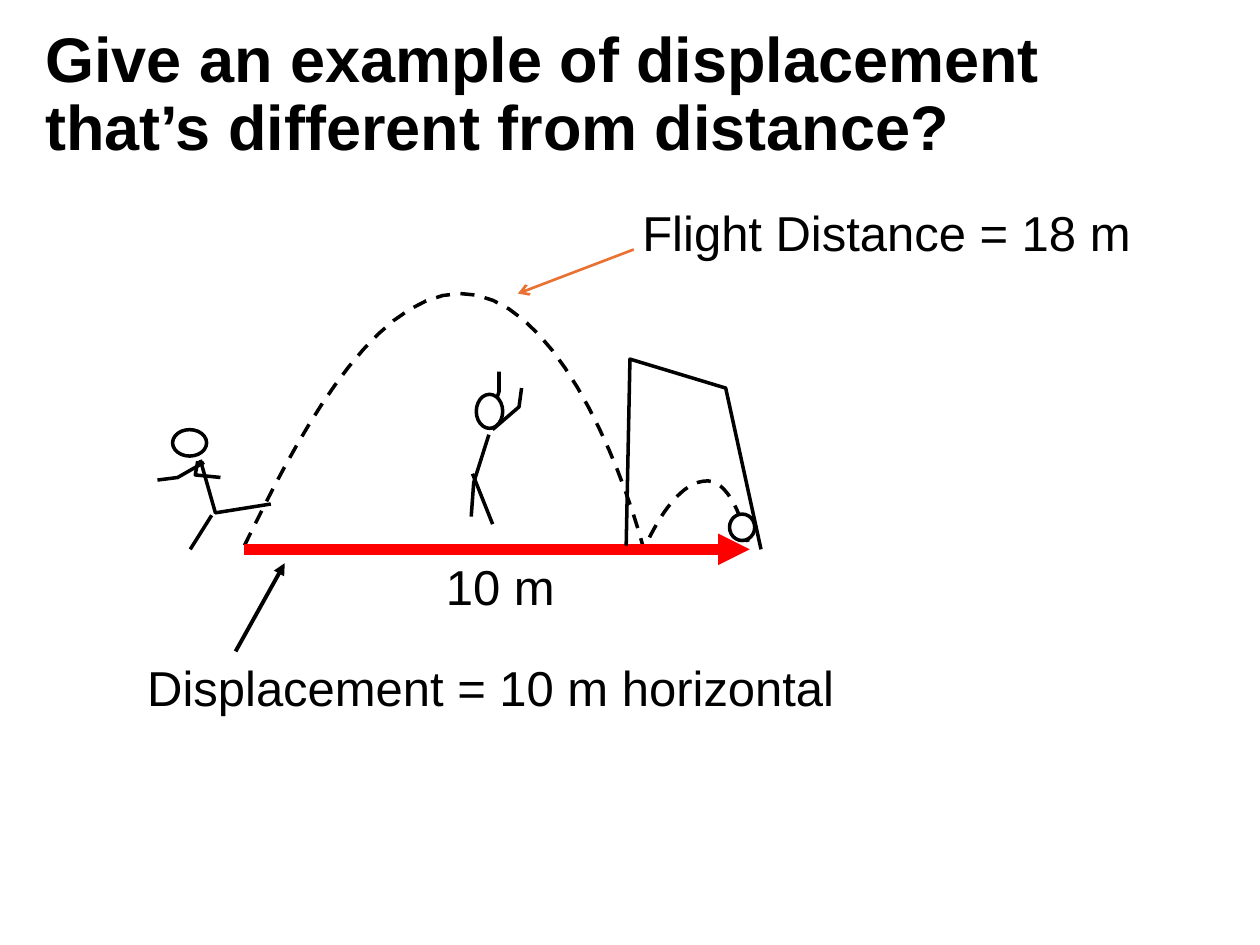
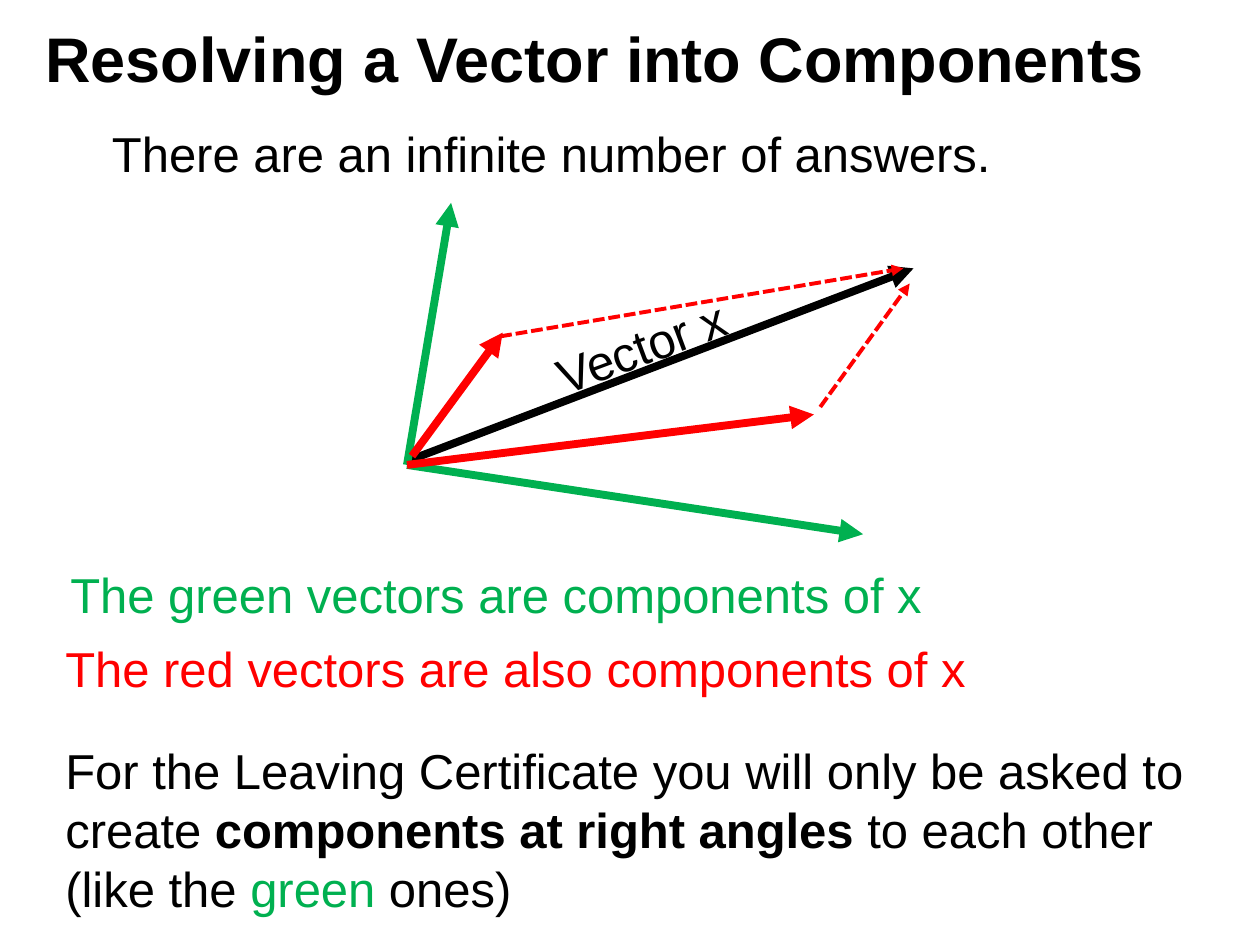
from dataclasses import dataclass

from lxml import etree
from pptx import Presentation
from pptx.dml.color import RGBColor
from pptx.enum.dml import MSO_LINE
from pptx.enum.shapes import MSO_CONNECTOR, MSO_SHAPE
from pptx.enum.text import MSO_ANCHOR, MSO_AUTO_SIZE, PP_ALIGN
from pptx.oxml.ns import qn
from pptx.util import Inches, Pt

STRAIGHT = MSO_CONNECTOR.STRAIGHT
OVAL = MSO_SHAPE.OVAL
DASH = MSO_LINE.DASH
SHORT_DASH = MSO_LINE.SQUARE_DOT
TOP = MSO_ANCHOR.TOP
LEFT = PP_ALIGN.LEFT
GROW = MSO_AUTO_SIZE.SHAPE_TO_FIT_TEXT
TITLE_ONLY = 5


@dataclass(frozen=True)
class Theme:
    font: str = "Arial"
    black: str = "000000"
    white: str = "FFFFFF"
    red: str = "FF0000"
    green: str = "00B050"
    orange: str = "E97132"
    title_size: float = 36
    body_size: float = 28
    pen: float = 2
    pointer: float = 2.25
    vector: float = 4.5
    displacement: float = 6


THEME = Theme()


def write(frame, *runs, size=THEME.body_size, color=THEME.black, bold=False,
          wrap=True, spacing=None):
    frame.word_wrap = wrap
    frame.auto_size = GROW
    frame.vertical_anchor = TOP
    paragraph = frame.paragraphs[0]
    paragraph.alignment = LEFT
    if spacing:
        paragraph.line_spacing = spacing
    for words, changes in runs:
        run = paragraph.add_run()
        run.text = words
        run.font.name = THEME.font
        run.font.size = Pt(size)
        run.font.bold = changes.get("bold", bold)
        run.font.color.rgb = RGBColor.from_string(changes.get("color", color))


def bezier(start, *curves, steps=16):
    points = [start]
    for first, second, end in curves:
        origin = points[-1]
        for step in range(1, steps + 1):
            t = step / steps
            weights = ((1 - t) ** 3, 3 * t * (1 - t) ** 2, 3 * t * t * (1 - t), t ** 3)
            corners = (origin, first, second, end)
            points.append(tuple(sum(w * corner[axis] for w, corner in zip(weights, corners))
                                for axis in (0, 1)))
    return points


class Board:
    def __init__(self, deck, theme):
        self.deck = deck
        self.theme = theme
        self.slide = None

    def start(self, heading, height):
        self.slide = self.deck.slides.add_slide(self.deck.slide_layouts[TITLE_ONLY])
        title = self.slide.shapes.title
        title.left, title.top = Inches(0.26), Inches(0.17)
        title.width, title.height = Inches(9.54), Inches(height)
        write(title.text_frame, (heading, {}), size=self.theme.title_size,
              bold=True, spacing=0.9)

    def text(self, box, *runs, rotation=0, **style):
        label = self.slide.shapes.add_textbox(*map(Inches, box))
        label.rotation = rotation
        write(label.text_frame, *runs, **style)

    def stroke(self, line, color, width, dash=None):
        line.color.rgb = RGBColor.from_string(color)
        line.width = Pt(width)
        if dash:
            line.dash_style = dash

    def line(self, start, end, color=THEME.black, width=THEME.pen, dash=None, tip=None):
        connector = self.slide.shapes.add_connector(STRAIGHT, *map(Inches, (*start, *end)))
        self.stroke(connector.line, color, width, dash)
        properties = connector._element.spPr
        if tip:
            etree.SubElement(properties.find(qn("a:ln")), qn("a:tailEnd"), type=tip)
        etree.SubElement(properties, qn("a:effectLst"))

    def outline(self, points, dash=None):
        corners = [(Inches(x), Inches(y)) for x, y in points]
        builder = self.slide.shapes.build_freeform(*corners[0])
        builder.add_line_segments(corners[1:], close=False)
        shape = builder.convert_to_shape()
        shape.shadow.inherit = False
        shape.fill.background()
        self.stroke(shape.line, self.theme.black, self.theme.pen, dash)

    def oval(self, box, fill=None):
        shape = self.slide.shapes.add_shape(OVAL, *map(Inches, box))
        shape.shadow.inherit = False
        if fill:
            shape.fill.solid()
            shape.fill.fore_color.rgb = RGBColor.from_string(fill)
        else:
            shape.fill.background()
        self.stroke(shape.line, self.theme.black, self.theme.pen)


def draw_kicker(board):
    board.oval((1.37, 3.41, 0.27, 0.21))
    body_and_leg = [(1.59, 3.65), (1.71, 4.07), (2.15, 4)]
    front_arm = [(1.57, 3.66), (1.55, 3.77), (1.75, 3.79)]
    back_arm = [(1.62, 3.67), (1.41, 3.79), (1.25, 3.81)]
    for limb in (body_and_leg, front_arm, back_arm):
        board.outline(limb)
    board.line((1.68, 4.09), (1.51, 4.36))


def draw_goalkeeper(board):
    body_and_leg = [(3.88, 3.45), (3.76, 3.83), (3.74, 4.1)]
    right_arm = [(3.91, 3.41), (4.12, 3.23), (4.14, 3.08)]
    left_arm = [(3.87, 3.38), (3.96, 3.11), (3.96, 2.95)]
    for limb in (body_and_leg, right_arm, left_arm):
        board.outline(limb)
    board.line((3.75, 3.76), (3.91, 4.16))
    board.oval((3.78, 3.13, 0.21, 0.27), board.theme.white)


def displacement_slide(board):
    theme = board.theme
    board.start("Give an example of displacement that’s different from distance?", 1.2)
    board.text((1.07, 5.17, 5.75, 0.57), ("Displacement = 10 m horizontal", {}))
    board.text((5, 1.56, 4.11, 0.57), ("Flight Distance = 18 m", {}))
    board.line((5.03, 1.98), (4.11, 2.33), theme.orange, 1.5, tip="arrow")
    flight = bezier(
        (1.94, 4.33),
        ((2.3, 3.6), (2.92, 2.34), (3.65, 2.33)),
        ((4.38, 2.32), (4.92, 3.65), (5.11, 4.36)),
        ((5.2, 4.16), (5.37, 3.85), (5.58, 3.82)),
        ((5.79, 3.78), (5.9, 4.16), (5.95, 4.35)),
    )
    board.outline(flight, DASH)
    draw_kicker(board)
    board.line((1.94, 4.36), (5.95, 4.36), theme.red, theme.displacement, tip="triangle")
    draw_goalkeeper(board)
    board.oval((5.79, 4.08, 0.2, 0.21), theme.white)
    goal = [(4.97, 4.33), (5, 2.85), (5.76, 3.08), (6.04, 4.36)]
    board.outline(goal)
    board.text((3.44, 4.37, 1.24, 0.57), ("10 m", {}))
    board.line((1.87, 5.17), (2.26, 4.47), width=theme.pointer, tip="triangle")


def components_slide(board):
    theme = board.theme
    board.start("Resolving a Vector into Components", 0.65)
    board.text((0.79, 0.93, 8.9, 0.57), ("There are an infinite number of answers.", {}))
    origin = (3.23, 3.69)
    solid = {"width": theme.vector, "tip": "triangle"}
    dashed = {"width": theme.pointer, "dash": SHORT_DASH, "tip": "triangle"}
    board.line((3.23, 3.66), (7.25, 2.13), **solid)
    board.text((4.29, 2.46, 1.62, 0.57), ("Vector x", {}), rotation=339.6, wrap=False)
    for start, end, color, style in (
        (origin, (6.85, 4.24), theme.green, solid),
        (origin, (3.58, 1.61), theme.green, solid),
        (origin, (6.46, 3.29), theme.red, solid),
        ((6.51, 3.23), (7.22, 2.25), theme.red, dashed),
        ((3.27, 3.62), (3.99, 2.64), theme.red, solid),
        ((3.97, 2.67), (7.17, 2.13), theme.red, dashed),
    ):
        board.line(start, end, color, **style)
    board.text((0.46, 4.43, 9.27, 0.57),
               ("The green vectors are components of x", {}), color=theme.green)
    board.text((0.42, 5.02, 9.27, 0.57),
               ("The red vectors are also components of x", {}), color=theme.red)
    board.text(
        (0.42, 5.83, 9.41, 1.51),
        ("For the Leaving Certificate you will only be asked to create ", {}),
        ("components at right angles ", {"bold": True}),
        ("to each other (like the ", {}),
        ("green", {"color": theme.green}),
        (" ones)", {}),
    )


def main():
    deck = Presentation()
    deck.slide_width, deck.slide_height = Inches(10), Inches(7.5)
    board = Board(deck, THEME)
    displacement_slide(board)
    components_slide(board)
    deck.save("out.pptx")


if __name__ == "__main__":
    main()
